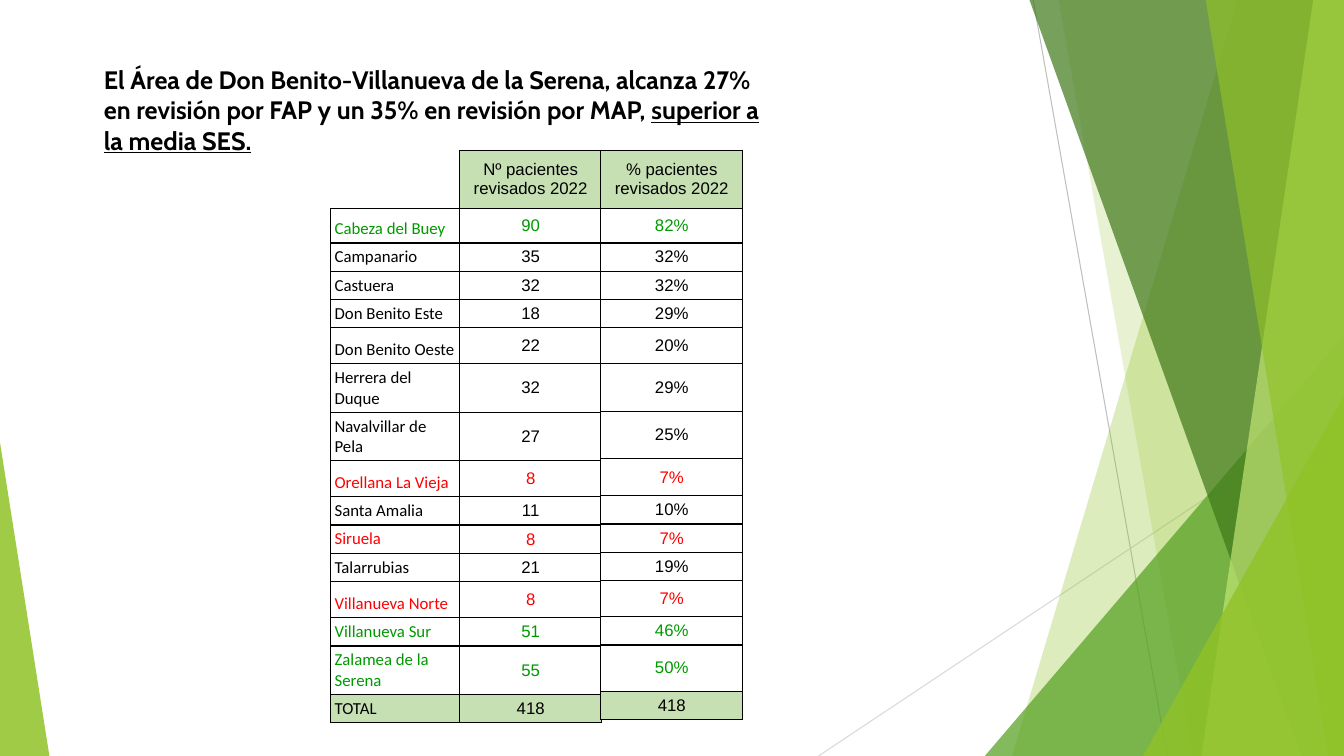
from lxml.etree import SubElement
from pptx import Presentation
from pptx.dml.color import RGBColor
from pptx.enum.shapes import MSO_CONNECTOR, MSO_SHAPE
from pptx.enum.text import MSO_ANCHOR, MSO_AUTO_SIZE, PP_ALIGN
from pptx.oxml.ns import qn
from pptx.util import Emu, Pt

COLUMNS, ROWS = 40, 22.5
CELL = 304800

BLACK = RGBColor(0x00, 0x00, 0x00)
WHITE = RGBColor(0xFF, 0xFF, 0xFF)
HIGH = RGBColor(0x00, 0x99, 0x00)
LOW = RGBColor(0xFF, 0x00, 0x00)
HEADER = RGBColor(0xC6, 0xE0, 0xB4)
LIME = RGBColor(0x90, 0xC2, 0x26)
LEAF = RGBColor(0x54, 0xA0, 0x21)
FOREST = RGBColor(0x3F, 0x78, 0x19)
PALE = RGBColor(0xC0, 0xE4, 0x74)
GREY = RGBColor(0xBF, 0xBF, 0xBF)
LIGHT_GREY = RGBColor(0xD9, 0xD9, 0xD9)

REVIEWS = [
    ("Cabeza del Buey", "90", "82%", HIGH),
    ("Campanario", "35", "32%", BLACK),
    ("Castuera", "32", "32%", BLACK),
    ("Don Benito Este", "18", "29%", BLACK),
    ("Don Benito Oeste", "22", "20%", BLACK),
    ("Herrera del Duque", "32", "29%", BLACK),
    ("Navalvillar de Pela", "27", "25%", BLACK),
    ("Orellana La Vieja", "8", "7%", LOW),
    ("Santa Amalia", "11", "10%", BLACK),
    ("Siruela", "8", "7%", LOW),
    ("Talarrubias", "21", "19%", BLACK),
    ("Villanueva Norte", "8", "7%", LOW),
    ("Villanueva Sur", "51", "46%", HIGH),
    ("Zalamea de la Serena", "55", "50%", HIGH),
    ("TOTAL", "418", "418", BLACK),
]
PATIENT_ROWS = [1.74, 1.02, 0.66, 0.66, 0.66, 1.08, 1.08, 1.08,
                1.08, 0.66, 0.66, 0.66, 1.08, 0.66, 1.08, 0.66]
SHARE_ROWS = [1.74, 1.02, 0.66, 0.66, 0.66, 1.08, 1.41, 1.41,
              1.11, 0.66, 0.66, 0.66, 1.08, 0.66, 1.38, 0.66]


def grid(*cells):
    return [Emu(round(cell * CELL)) for cell in cells]


class ReviewSlide:
    def __init__(self, presentation):
        self.slide = presentation.slides.add_slide(presentation.slide_layouts[5])
        self.shapes = self.slide.shapes
        self.title_font, self.name_font, self.figure_font = "Cabin", "Calibri", "Arial"
        self.text_size = Pt(12)
        self.margin = grid(0.12)[0]

    def line(self, start, end, color):
        ray = self.shapes.add_connector(MSO_CONNECTOR.STRAIGHT, *grid(*start, *end))
        ray.line.color.rgb = color
        ray.line.width = Pt(0.75)
        SubElement(ray.element.spPr, qn("a:effectLst"))

    def paint(self, shape, color, opacity):
        shape.shadow.inherit = False
        shape.fill.solid()
        shape.fill.fore_color.rgb = color
        shape.line.fill.background()
        tint = shape.element.spPr.find(qn("a:solidFill")).find(qn("a:srgbClr"))
        SubElement(tint, qn("a:alpha")).set("val", str(opacity * 1000))

    def strip(self, top_x, bottom_x, color, opacity):
        top = -0.03
        builder = self.shapes.build_freeform(*grid(top_x, top))
        corners = [(COLUMNS, top), (COLUMNS, ROWS), (bottom_x, ROWS)]
        builder.add_line_segments([grid(*corner) for corner in corners])
        self.paint(builder.convert_to_shape(), color, opacity)

    def triangle(self, left, top, right, apex, color, opacity):
        wedge = self.shapes.add_shape(
            MSO_SHAPE.ISOSCELES_TRIANGLE, *grid(left, top, right - left, ROWS - top))
        wedge.adjustments[0] = apex
        self.paint(wedge, color, opacity)

    def title(self, box, statement, emphasis):
        title = self.shapes.title
        title.left, title.top, title.width, title.height = grid(*box)
        frame = title.text_frame
        frame.word_wrap = True
        frame.auto_size = MSO_AUTO_SIZE.SHAPE_TO_FIT_TEXT
        frame.vertical_anchor = MSO_ANCHOR.TOP
        paragraph = frame.paragraphs[0]
        paragraph.alignment = PP_ALIGN.LEFT
        paragraph.font.name = self.title_font
        paragraph.font.size = Pt(18)
        paragraph.font.bold = True
        paragraph.font.color.rgb = BLACK
        paragraph.add_run().text = statement
        underlined = paragraph.add_run()
        underlined.text = emphasis
        underlined.font.underline = True

    def table(self, box, widths, heights, records):
        frame = self.shapes.add_table(len(heights), len(widths), *grid(*box))
        table = frame.table
        table.first_row = table.horz_banding = False
        for column, width in zip(table.columns, grid(*widths)):
            column.width = width
        for row, height in zip(table.rows, grid(*heights)):
            row.height = height
        for row, (texts, color) in enumerate(records):
            banded = row in (0, len(records) - 1)
            for column, text in enumerate(texts):
                is_name = column == 0 and len(texts) > 1
                fill = HEADER if banded and text else WHITE
                self.cell(table.cell(row, column), text, color, fill, is_name)
        frame.height = grid(box[3])[0]

    def cell(self, cell, text, color, fill, is_name):
        cell.margin_left = cell.margin_right = self.margin
        cell.margin_top = cell.margin_bottom = self.margin
        cell.vertical_anchor = MSO_ANCHOR.BOTTOM if is_name else MSO_ANCHOR.MIDDLE
        cell.fill.solid()
        cell.fill.fore_color.rgb = fill
        cell.text = text
        paragraph = cell.text_frame.paragraphs[0]
        paragraph.alignment = PP_ALIGN.LEFT if is_name else PP_ALIGN.CENTER
        paragraph.font.name = self.name_font if is_name else self.figure_font
        paragraph.font.size = self.text_size
        paragraph.font.color.rgb = color
        self.borders(cell, "LRTB" if text else "RB")

    def borders(self, cell, sides):
        properties = cell._tc.get_or_add_tcPr()
        for position, side in enumerate(sides):
            edge = SubElement(properties, qn(f"a:ln{side}"), w=str(Pt(1)))
            ink = SubElement(SubElement(edge, qn("a:solidFill")), qn("a:srgbClr"))
            ink.set("val", str(BLACK))
            properties.insert(position, edge)


def main():
    presentation = Presentation()
    presentation.slide_width, presentation.slide_height = grid(COLUMNS, ROWS)
    review = ReviewSlide(presentation)

    review.line((30.75, 0), (34.74, ROWS), GREY)
    review.line((COLUMNS, 12.09), (24.36, ROWS), LIGHT_GREY)
    review.strip(36.84, 30.12, LIME, 30)
    review.strip(31.5, 35.49, LIME, 20)
    review.triangle(29.31, 9.99, COLUMNS, 1, LEAF, 72)
    review.strip(30.63, 38.73, FOREST, 70)
    review.strip(39.09, 35.76, PALE, 70)
    review.strip(35.88, 39.54, LIME, 65)
    review.triangle(34.02, 11.79, COLUMNS, 1, LIME, 80)
    review.triangle(0, 13.17, 1.47, 0, LIME, 85)

    review.title(
        (2.79, 1.77, 20.43, 3.03),
        "El Área de Don Benito-Villanueva de la Serena, alcanza 27% en revisión "
        "por FAP y un 35% en revisión por MAP, ",
        "superior a la media SES.")

    patients = [(("", "Nº pacientes revisados 2022"), BLACK)]
    patients += [((name, count), color) for name, count, _, color in REVIEWS]
    shares = [(("% pacientes revisados 2022",), BLACK)]
    shares += [((share,), color) for _, _, share, color in REVIEWS]
    review.table((9.84, 4.47, 8.07, 16.83), [3.84, 4.23], PATIENT_ROWS, patients)
    review.table((17.88, 4.47, 4.23, 16.8), [4.23], SHARE_ROWS, shares)

    presentation.save("out.pptx")


if __name__ == "__main__":
    main()
